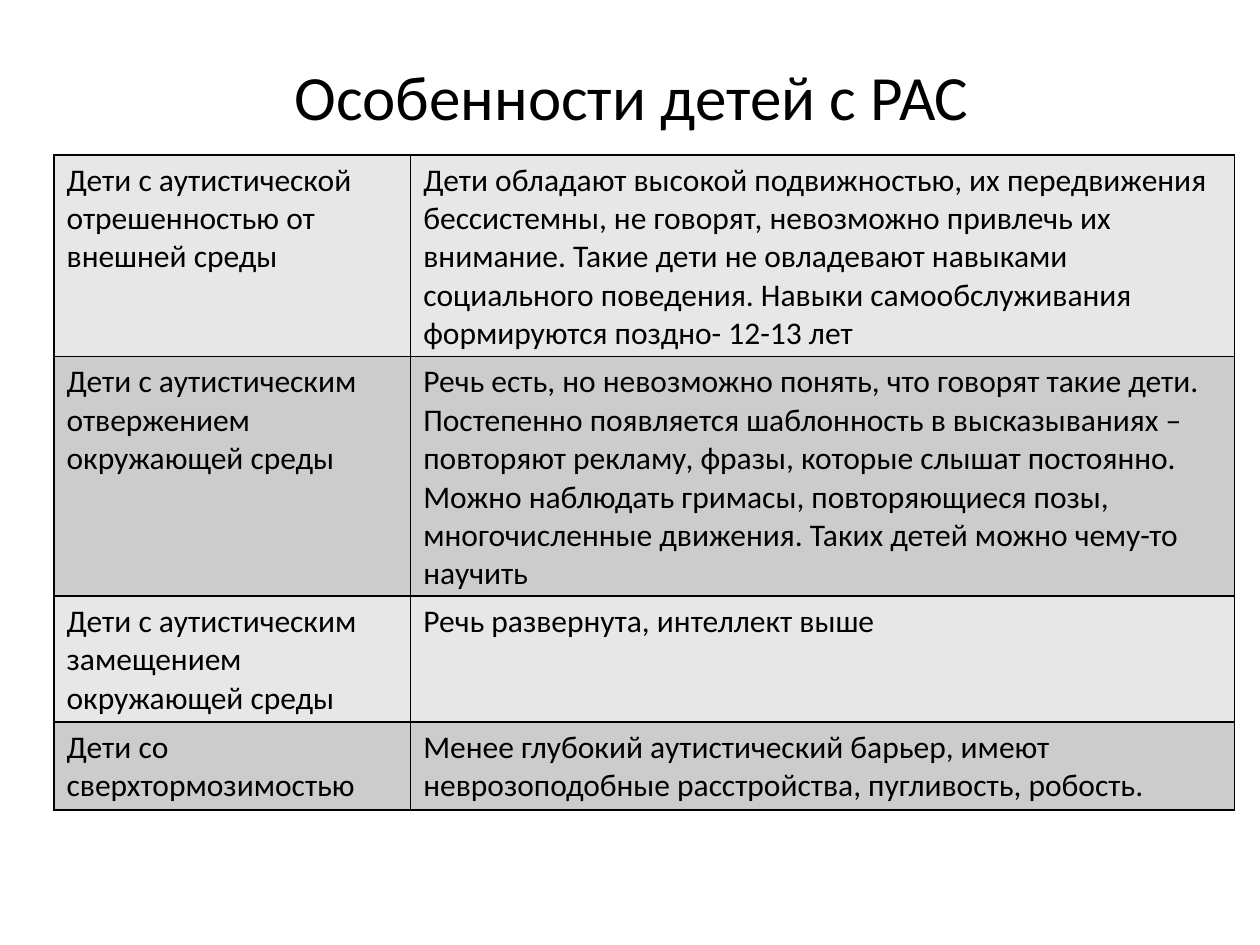
from lxml import etree
from pptx import Presentation
from pptx import util as u
from pptx.dml.color import RGBColor
from pptx.enum import text as t
from pptx.oxml.ns import qn

BLACK = RGBColor(0, 0, 0)
LIGHT = RGBColor(0xE7, 0xE7, 0xE7)
GREY = RGBColor(0xCC, 0xCC, 0xCC)
FONT = "Calibri"

ROWS = [
    ("Дети с аутистической отрешенностью от внешней среды",
     "Дети обладают высокой подвижностью, их передвижения бессистемны, "
     "не говорят, невозможно привлечь их внимание. Такие дети не овладевают "
     "навыками социального поведения. Навыки самообслуживания формируются "
     "поздно- 12-13 лет"),
    ("Дети с аутистическим отвержением окружающей среды",
     "Речь есть, но невозможно понять, что говорят такие дети. Постепенно "
     "появляется шаблонность в высказываниях – повторяют рекламу, фразы, "
     "которые слышат постоянно. Можно наблюдать гримасы, повторяющиеся позы, "
     "многочисленные движения. Таких детей можно чему-то научить"),
    ("Дети с аутистическим замещением окружающей среды",
     "Речь развернута, интеллект выше"),
    ("Дети со сверхтормозимостью",
     "Менее глубокий аутистический барьер, имеют неврозоподобные "
     "расстройства, пугливость, робость."),
]


def write(frame, words, size=18, color=BLACK, align=t.PP_ALIGN.LEFT):
    frame.word_wrap = True
    para = frame.paragraphs[0]
    para.alignment = align
    run = para.add_run()
    run.text = words
    run.font.name = FONT
    run.font.size = u.Pt(size)
    run.font.color.rgb = color


def border(cell, color=BLACK, width=1):
    """Line all four sides; the lines must precede the fill in the XML."""
    props = cell._tc.get_or_add_tcPr()
    for i, side in enumerate(("a:lnL", "a:lnR", "a:lnT", "a:lnB")):
        line = etree.Element(qn(side), w=str(u.Pt(width)))
        fill = etree.SubElement(line, qn("a:solidFill"))
        etree.SubElement(fill, qn("a:srgbClr"), val=str(color))
        props.insert(i, line)


def title(slide, box, words):
    frame = slide.shapes.add_textbox(*box).text_frame
    frame.vertical_anchor = t.MSO_ANCHOR.MIDDLE
    write(frame, words, size=36, align=t.PP_ALIGN.CENTER)


def grid(slide, box, rows, first, least):
    """Two columns, the left one `first` wide; rows grow from `least`."""
    left, top, width, height = box
    shape = slide.shapes.add_table(len(rows), 2, left, top, width, height)
    table = shape.table
    table.columns[0].width = first
    table.columns[1].width = width - first
    for i, row in enumerate(rows):
        table.rows[i].height = least
        for j, words in enumerate(row):
            cell = table.cell(i, j)
            cell.fill.solid()
            cell.fill.fore_color.rgb = GREY if i % 2 else LIGHT
            border(cell)
            write(cell.text_frame, words)
    shape.height = height


def main():
    deck = Presentation()
    deck.slide_width, deck.slide_height = u.Cm(25.4), u.Cm(19.05)
    slide = deck.slides.add_slide(deck.slide_layouts[6])
    title(slide, [u.Cm(n) for n in (1.3, 0.33, 22.86, 3.18)],
          "Особенности детей с РАС")
    grid(slide, [u.Cm(n) for n in (1.09, 3.12, 23.8, 13.21)], ROWS,
         first=u.Cm(7.19), least=u.Cm(1.04))
    deck.save("out.pptx")


if __name__ == "__main__":
    main()
